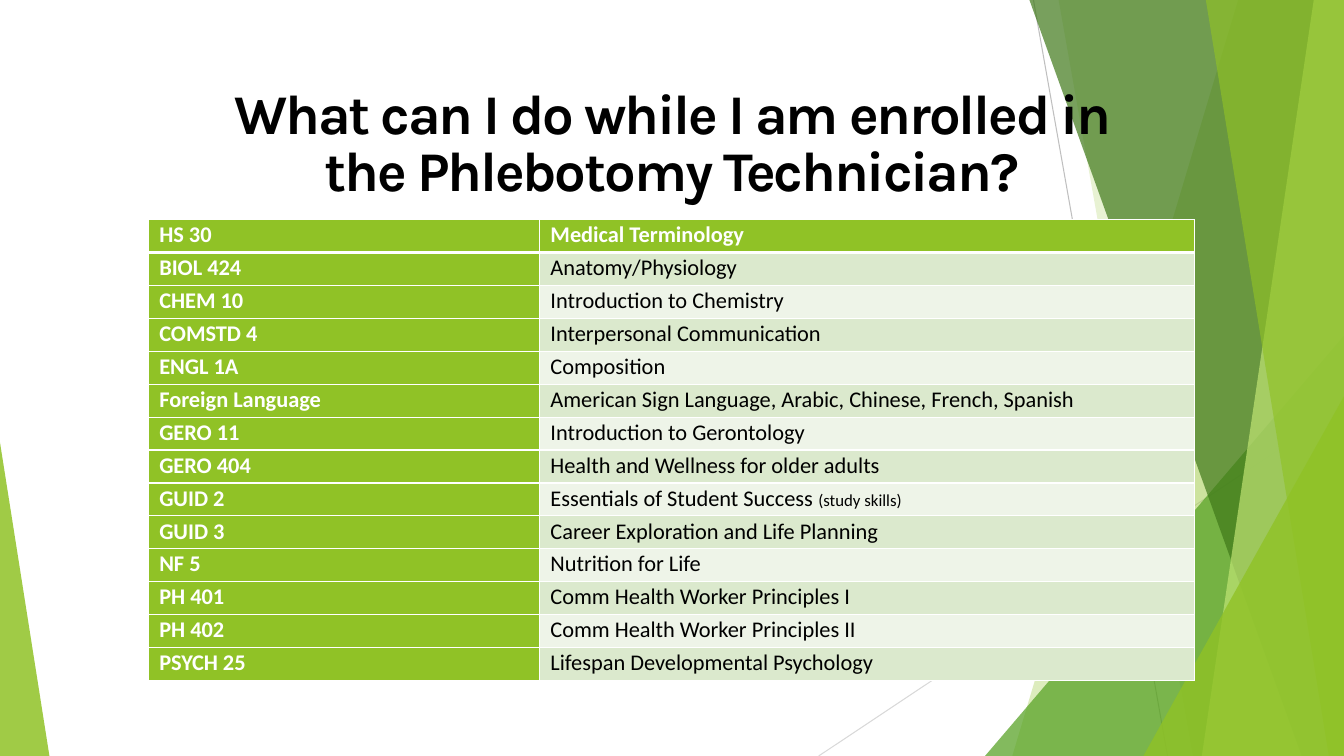
from lxml import etree
from pptx import Presentation
from pptx.dml.color import RGBColor
from pptx.enum.shapes import MSO_CONNECTOR, MSO_SHAPE
from pptx.enum.text import MSO_ANCHOR, MSO_AUTO_SIZE, PP_ALIGN
from pptx.oxml.ns import qn
from pptx.util import Inches, Pt

STRAIGHT = MSO_CONNECTOR.STRAIGHT
TRIANGLE = MSO_SHAPE.ISOSCELES_TRIANGLE
MIDDLE, TOP = MSO_ANCHOR.MIDDLE, MSO_ANCHOR.TOP
CENTER = PP_ALIGN.CENTER
NO_FIT = MSO_AUTO_SIZE.NONE
W, H = 13.33, 7.5
GREEN, WHITE, BLACK = "90C226", "FFFFFF", "000000"
STRIPES = ["EEF4E8", "DBE9CD"]


def rgb(value):
    return RGBColor.from_string(value)


def set_font(r, name, size, color, bold):
    r.font.name, r.font.size, r.font.bold = name, Pt(size), bold
    r.font.color.rgb = rgb(color)


prs = Presentation()
prs.slide_width, prs.slide_height = Inches(W), Inches(H)
slide = prs.slides.add_slide(prs.slide_layouts[5])
shapes = slide.shapes

rays = [
    (10.25, 0, 11.58, H, "BFBFBF"),
    (W, 4.03, 8.12, H, "D9D9D9"),
]
for x1, y1, x2, y2, color in rays:
    line = shapes.add_connector(STRAIGHT, Inches(x1), Inches(y1), Inches(x2), Inches(y2))
    line.line.color.rgb = rgb(color)
    line.line.width = Pt(0.75)
    etree.SubElement(line._element.spPr, qn("a:effectLst"))

# Bands hold top and bottom x; triangles hold left, top, width and apex.
facets = [
    ((12.28, 10.04), GREEN, 30),
    ((10.5, 11.83), GREEN, 20),
    ((9.77, 3.33, 3.56, 1), "54A021", 72),
    ((10.21, 12.91), "3F7819", 70),
    ((13.03, 11.92), "C0E474", 70),
    ((11.96, 13.18), GREEN, 65),
    ((11.34, 3.93, 1.99, 1), GREEN, 80),
    ((0, 4.39, 0.49, 0), GREEN, 85),
]
for geometry, color, opacity in facets:
    if len(geometry) == 2:
        top_x, bottom_x = geometry
        outline = shapes.build_freeform(Inches(top_x), 0)
        corners = [(W, 0), (W, H), (bottom_x, H)]
        outline.add_line_segments([(Inches(x), Inches(y)) for x, y in corners])
        sp = outline.convert_to_shape()
    else:
        left, top, width, apex = geometry
        sp = shapes.add_shape(TRIANGLE, Inches(left), Inches(top), Inches(width), Inches(H - top))
        sp.adjustments[0] = apex
    sp.shadow.inherit = False
    sp.line.fill.background()
    sp.fill.solid()
    sp.fill.fore_color.rgb = rgb(color)
    tint = sp._element.spPr.find(".//" + qn("a:srgbClr"))
    etree.SubElement(tint, qn("a:alpha"), val=str(opacity * 1000))

title = shapes.title
shapes._spTree.append(title._element)
title.left, title.top = Inches(1.92), Inches(0.87)
title.width, title.height = Inches(9.49), Inches(1.15)
tf = title.text_frame
tf.text = "What can I do while I am enrolled in the Phlebotomy Technician?"
tf.word_wrap, tf.auto_size, tf.vertical_anchor = True, NO_FIT, MIDDLE
tf.margin_left = tf.margin_right = tf.margin_top = tf.margin_bottom = Inches(0.25)
p = tf.paragraphs[0]
p.alignment, p.line_spacing, p.space_after = CENTER, 0.85, Pt(6)
set_font(p.runs[0], "Karla", 40, BLACK, True)
p.runs[0]._r.get_or_add_rPr().set("spc", "-150")

courses = [
    ("HS 30", "Medical Terminology"),
    ("BIOL 424", "Anatomy/Physiology"),
    ("CHEM 10", "Introduction to Chemistry"),
    ("COMSTD 4", "Interpersonal Communication"),
    ("ENGL 1A", "Composition"),
    ("Foreign Language", "American Sign Language, Arabic, Chinese, French, Spanish"),
    ("GERO 11", "Introduction to Gerontology"),
    ("GERO 404", "Health and Wellness for older adults"),
    ("GUID 2", "Essentials of Student Success ", "(study skills)"),
    ("GUID 3", "Career Exploration and Life Planning"),
    ("NF 5", "Nutrition for Life"),
    ("PH 401", "Comm Health Worker Principles I"),
    ("PH 402", "Comm Health Worker Principles II"),
    ("PSYCH 25", "Lifespan Developmental Psychology"),
]
table = shapes.add_table(len(courses), 2, Inches(1.47), Inches(2.18), Inches(10.38), Inches(4.57)).table
table.columns[0].width, table.columns[1].width = Inches(3.88), Inches(6.5)
for i, (code, name, *note) in enumerate(courses):
    for j, text in enumerate((code, name)):
        cell = table.cell(i, j)
        strong = i == 0 or j == 0
        cell.margin_left = cell.margin_right = Inches(0.11)
        cell.margin_top = cell.margin_bottom = 0
        cell.vertical_anchor = TOP
        for side in ("lnL", "lnR", "lnT", "lnB"):
            thick = (i, side) in [(0, "lnB"), (1, "lnT")]
            border = etree.SubElement(cell._tc.get_or_add_tcPr(), qn("a:" + side), w=str(Pt(3 if thick else 1)))
            ink = etree.SubElement(border, qn("a:solidFill"))
            etree.SubElement(ink, qn("a:srgbClr"), val=WHITE)
        cell.fill.solid()
        cell.fill.fore_color.rgb = rgb(GREEN if strong else STRIPES[i % 2])
        p = cell.text_frame.paragraphs[0]
        p.text = text
        p.line_spacing = 1.07
        set_font(p.runs[0], "Calibri", 16, WHITE if strong else BLACK, strong)
    for text in note:
        r = p.add_run()
        r.text = text
        set_font(r, "Calibri", 12, BLACK, False)

prs.save("out.pptx")
